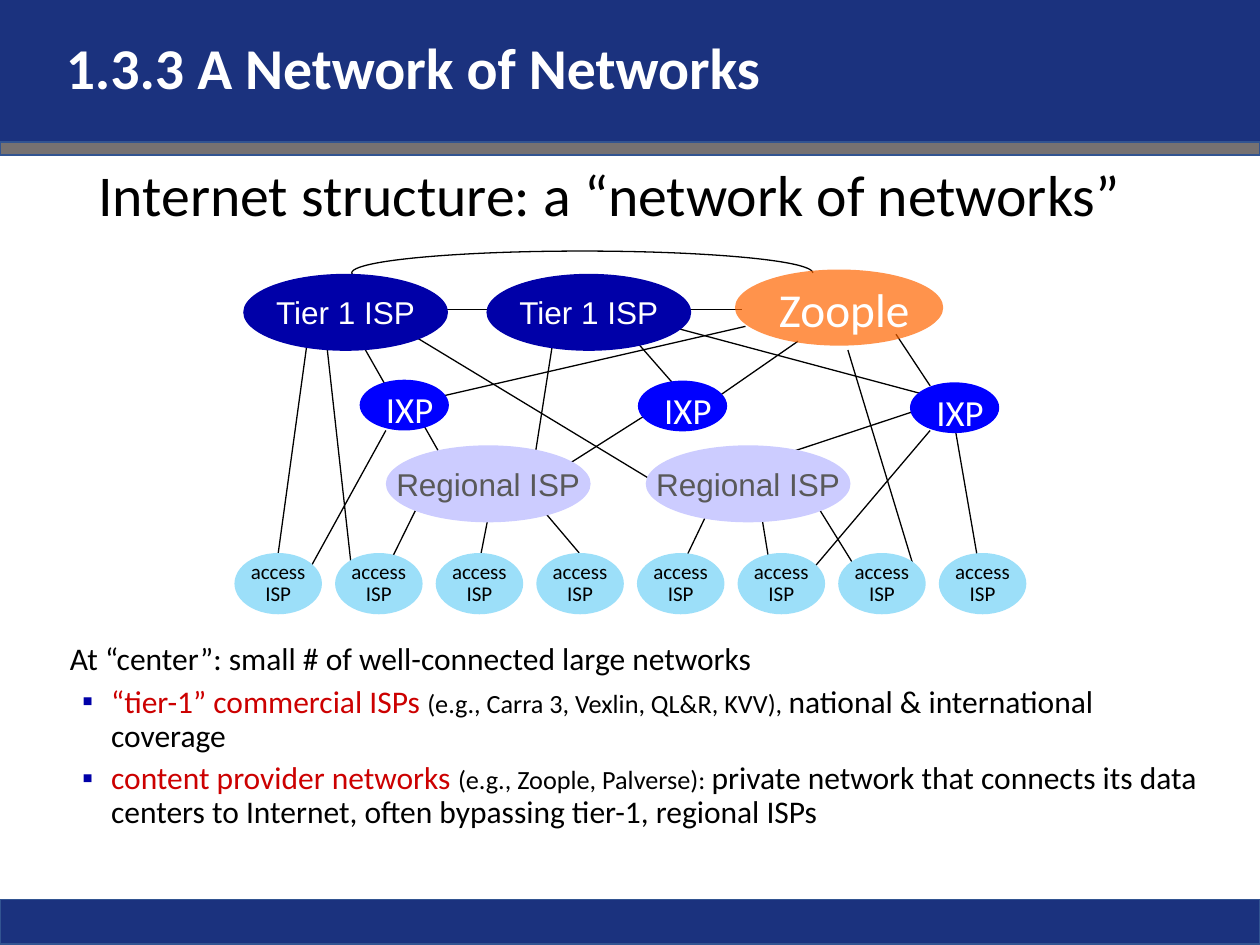
from dataclasses import dataclass

from lxml import etree
from pptx import Presentation
from pptx import util as u
from pptx.dml.color import RGBColor
from pptx.enum import shapes, text
from pptx.oxml import ns


@dataclass(frozen=True)
class Theme:
    body_font: str = "Calibri"
    node_font: str = "Arial"
    navy: str = "1B327E"
    edge: str = "325491"
    gray: str = "767171"
    black: str = "000000"
    white: str = "FFFFFF"
    red: str = "CC0000"
    tier: str = "0000A8"
    regional: str = "CCCCFF"
    regional_text: str = "595959"
    access: str = "9CDFF9"
    exchange: str = "0000FF"
    content: str = "FF6600"
    title_size: int = 33
    content_size: int = 27
    exchange_size: int = 21
    body_size: int = 18
    detail_size: int = 15
    access_size: int = 12
    line: float = 0.75


class SlideBuilder:
    def __init__(self, slide, theme):
        self.slide = slide
        self.theme = theme

    def run(self, paragraph, words, size, color, font=None, bold=False):
        run = paragraph.add_run()
        run.text = words
        run.font.name = font or self.theme.body_font
        run.font.size = u.Pt(size)
        run.font.bold = bold
        run.font.color.rgb = RGBColor.from_string(color)

    def shape(self, kind, left, top, width, height, fill=None, line=None, line_width=1):
        shape = self.slide.shapes.add_shape(
            kind, u.Pt(left), u.Pt(top), u.Pt(width), u.Pt(height))
        shape.shadow.inherit = False
        if fill:
            shape.fill.solid()
            shape.fill.fore_color.rgb = RGBColor.from_string(fill)
        else:
            shape.fill.background()
        if line:
            shape.line.color.rgb = RGBColor.from_string(line)
            shape.line.width = u.Pt(line_width)
        else:
            shape.line.fill.background()
        return shape

    def bar(self, top, height, fill, line=None):
        self.shape(shapes.MSO_SHAPE.RECTANGLE, 0, top, 720, height, fill, line)

    def ellipse(self, left, top, width, height, fill):
        return self.shape(shapes.MSO_SHAPE.OVAL, left, top, width, height, fill)

    def node(self, left, top, width, height, fill, lines, size, color, font, spacing=1.0):
        frame = self.ellipse(left, top, width, height, fill).text_frame
        frame.word_wrap = False
        frame.vertical_anchor = text.MSO_ANCHOR.MIDDLE
        for index, words in enumerate(lines):
            paragraph = frame.add_paragraph() if index else frame.paragraphs[0]
            paragraph.alignment = text.PP_ALIGN.CENTER
            paragraph.line_spacing = spacing
            self.run(paragraph, words, size, color, font)

    def fade(self, shape, percent):
        color = shape.fill._xPr.find(ns.qn("a:solidFill"))[0]
        etree.SubElement(color, ns.qn("a:alpha"), val=str(percent * 1000))

    def link(self, x1, y1, x2, y2):
        connector = self.slide.shapes.add_connector(
            shapes.MSO_CONNECTOR.STRAIGHT, u.Pt(x1), u.Pt(y1), u.Pt(x2), u.Pt(y2))
        connector.line.color.rgb = RGBColor.from_string(self.theme.black)
        connector.line.width = u.Pt(self.theme.line)
        etree.SubElement(connector._element.spPr, ns.qn("a:effectLst"))

    def arc(self, left, top, width, height, start, end):
        shape = self.shape(shapes.MSO_SHAPE.ARC, left, top, width, height,
                           line=self.theme.black, line_width=self.theme.line)
        shape.adjustments[0] = start
        shape.adjustments[1] = end

    def text_box(self, left, top, width, height, wrap=True):
        box = self.slide.shapes.add_textbox(
            u.Pt(left), u.Pt(top), u.Pt(width), u.Pt(height))
        box.text_frame.word_wrap = wrap
        return box.text_frame

    def label(self, left, top, width, height, words, size):
        frame = self.text_box(left, top, width, height, wrap=False)
        self.run(frame.paragraphs[0], words, size, self.theme.white)

    def heading(self, frame, words, color, bold=False):
        frame.vertical_anchor = text.MSO_ANCHOR.MIDDLE
        paragraph = frame.paragraphs[0]
        paragraph.alignment = text.PP_ALIGN.LEFT
        paragraph.line_spacing = 0.9
        self.run(paragraph, words, self.theme.title_size, color, bold=bold)

    def title(self, left, top, width, height, words):
        title = self.slide.shapes.title
        title.left, title.top = u.Pt(left), u.Pt(top)
        title.width, title.height = u.Pt(width), u.Pt(height)
        title.text_frame.word_wrap = True
        self.heading(title.text_frame, words, self.theme.black)

    def bullet(self, frame, term, examples, detail):
        theme = self.theme
        paragraph = frame.add_paragraph()
        paragraph.level = 1
        properties = paragraph._p.get_or_add_pPr()
        properties.set("marL", str(u.Pt(27)))
        properties.set("indent", str(u.Pt(-16.5)))
        color = etree.SubElement(properties, ns.qn("a:buClr"))
        etree.SubElement(color, ns.qn("a:srgbClr"), val=theme.tier)
        etree.SubElement(properties, ns.qn("a:buFont"), typeface=theme.node_font)
        etree.SubElement(properties, ns.qn("a:buChar"), char="▪")
        tabs = etree.SubElement(properties, ns.qn("a:tabLst"))
        etree.SubElement(tabs, ns.qn("a:tab"), pos=str(u.Pt(20)), algn="l")
        paragraph.line_spacing = 0.9
        paragraph.space_before = u.Pt(5)
        self.run(paragraph, term, theme.body_size, theme.red)
        self.run(paragraph, examples, theme.detail_size, theme.black)
        self.run(paragraph, detail, theme.body_size, theme.black)


LINKS = [
    (177, 185, 159, 316), (278.5, 298, 273, 326), (237.5, 291.5, 220.5, 326),
    (186.5, 195, 201.5, 330.5), (220.5, 246, 174, 330.5), (306, 286.5, 331, 316),
    (404.5, 292.5, 388, 327), (435.5, 296.5, 440.5, 327), (468.5, 291.5, 493, 331),
    (484.5, 200, 521.5, 322), (285, 177, 253.5, 177), (424, 177, 392.5, 177),
    (512, 191, 531.5, 220.5), (206, 195, 220.5, 220.5), (239, 237.5, 253.5, 263),
    (426, 186.5, 239, 229.5), (363.5, 195, 388, 223), (316, 195, 306, 258.5),
    (368.5, 237.5, 320.5, 268), (239, 193.5, 373.5, 275), (546, 246, 560, 327),
    (531.5, 246, 459.5, 331), (527, 233.5, 450, 259), (456, 195, 407, 229),
    (384.5, 187, 528.5, 225.5),
]


def main():
    theme = Theme()
    presentation = Presentation()
    presentation.slide_width, presentation.slide_height = u.Pt(720), u.Pt(540)
    slide = presentation.slides.add_slide(presentation.slide_layouts[5])
    builder = SlideBuilder(slide, theme)

    builder.bar(514, 25.5, theme.navy, theme.edge)
    builder.bar(0, 81, theme.navy)
    builder.bar(81, 7.5, theme.gray, theme.edge)
    builder.title(49, 87, 620.5, 52.5, "Internet structure: a “network of networks”")

    for ends in LINKS:
        builder.link(*ends)
    builder.arc(201, 143.5, 263.5, 25, 106.82, 0)

    for left in (139, 278):
        builder.node(left, 156.5, 117, 44, theme.tier, ["Tier 1 ISP"],
                     theme.body_size, theme.white, theme.node_font)
    for left in (220.5, 369):
        builder.node(left, 254.5, 117, 44, theme.regional, ["Regional ISP"],
                     theme.body_size, theme.regional_text, theme.node_font)
    for column in range(8):
        builder.node(134 + 57.5 * column, 316, 50, 35, theme.access, ["access", "ISP"],
                     theme.access_size, theme.black, theme.body_font, 0.9)
    for left, top in ((205.5, 217), (364.5, 217.5), (520, 218.5)):
        builder.ellipse(left, top, 51, 29, theme.exchange)
        builder.label(left + 8, top + 0.5, 42, 32.5, "IXP", theme.exchange_size)

    frame = builder.text_box(31.5, 364.5, 666, 108)
    frame.margin_left = frame.margin_right = u.Pt(5)
    frame.margin_top = frame.margin_bottom = u.Pt(3)
    opening = frame.paragraphs[0]
    opening._p.get_or_add_pPr().set("marL", str(u.Pt(3.5)))
    opening.line_spacing = 0.9
    builder.run(opening, "At “center”: small # of well-connected large networks",
                theme.body_size, theme.black)
    builder.bullet(frame, "“tier-1” commercial ISPs ",
                   "(e.g., Carra 3, Vexlin, QL&R, KVV), ",
                   "national & international coverage")
    builder.bullet(frame, "content provider networks ", "(e.g., Zoople, Palverse): ",
                   "private network that connects its data centers to Internet, "
                   "often bypassing tier-1, regional ISPs")

    builder.fade(builder.ellipse(420, 154, 119, 43.5, theme.content), 70)
    builder.label(438, 156.5, 93, 40.5, "Zoople", theme.content_size)
    builder.heading(builder.text_box(30.5, 0, 552, 81),
                    "1.3.3 A Network of Networks", theme.white, bold=True)
    presentation.save("out.pptx")


if __name__ == "__main__":
    main()
